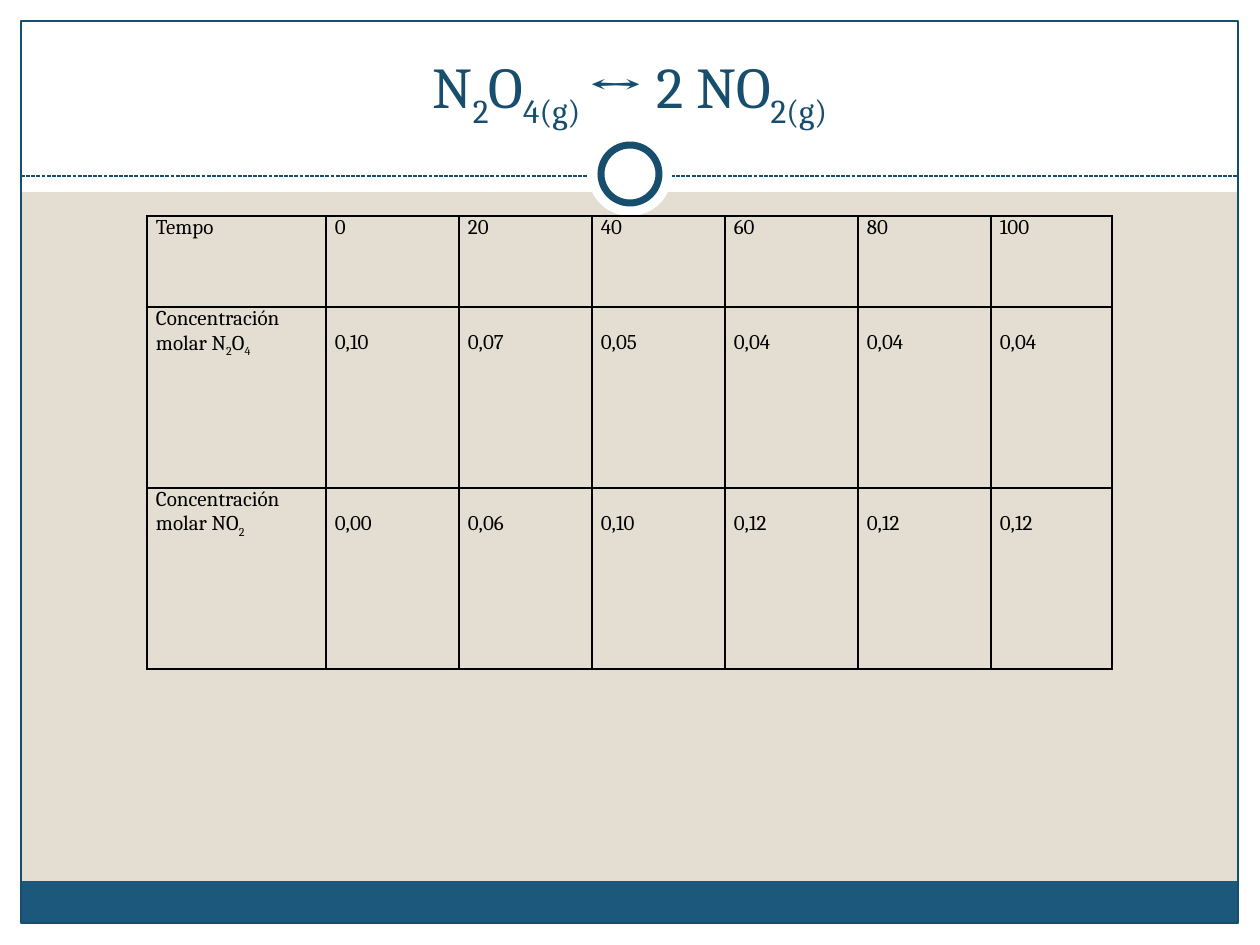
from dataclasses import dataclass

from lxml.etree import SubElement
from pptx import Presentation
from pptx.dml.color import RGBColor
from pptx.enum.dml import MSO_LINE
from pptx.enum.shapes import MSO_CONNECTOR, MSO_SHAPE
from pptx.enum.text import MSO_ANCHOR, PP_ALIGN
from pptx.oxml.ns import qn
from pptx.util import Emu, Pt


@dataclass(frozen=True)
class Theme:
    """Colours, font and type sizes of the deck."""
    sand: str = "E3DED1"
    white: str = "FFFFFF"
    blue: str = "1B587C"
    navy: str = "184E6D"
    black: str = "000000"
    font: str = "Cambria"
    title_size: int = 33
    arrow_size: int = 36
    cell_size: int = 12


def px(length):
    """Turn whole pixels into EMU at 126 pixels to the inch."""
    return Emu(round(length * 914400 / 126))


def apply(target, values):
    """Set each named attribute of the target."""
    for name, value in values.items():
        setattr(target, name, value)


class SlideBuilder:
    """Draws styled elements on the current slide."""

    def __init__(self, slide, theme):
        self.slide = slide
        self.theme = theme

    def background(self, color):
        """Fill the slide background."""
        fill = self.slide.background.fill
        fill.solid()
        fill.fore_color.rgb = RGBColor.from_string(color)

    def shape(self, kind, bounds, fill=None, line=None, width=0.75):
        """Add a preset shape with an optional fill and outline."""
        box = self.slide.shapes.add_shape(kind, *map(px, bounds))
        box.shadow.inherit = False
        for paint, color in ((box.fill, fill), (box.line.fill, line)):
            if color:
                paint.solid()
                paint.fore_color.rgb = RGBColor.from_string(color)
            else:
                paint.background()
        if line:
            box.line.width = Pt(width)

    def dashed_line(self, start, end, color):
        """Add a thin dashed connector without a shadow."""
        rule = self.slide.shapes.add_connector(
            MSO_CONNECTOR.STRAIGHT, *map(px, start + end))
        rule.line.color.rgb = RGBColor.from_string(color)
        apply(rule.line, {"width": Pt(0.75), "dash_style": MSO_LINE.SQUARE_DOT})
        SubElement(rule._element.spPr, qn("a:effectLst"))

    def spans(self, para, parts, size, color):
        """Add runs, each a text with its own format values."""
        for text, values in parts:
            span = para.add_run()
            span.text = text
            style = {"name": self.theme.font, "size": Pt(size), "bold": False}
            style.update(values)
            baseline = style.pop("baseline", None)
            apply(span.font, style)
            span.font.color.rgb = RGBColor.from_string(color)
            if baseline:
                span._r.get_or_add_rPr().set("baseline", baseline)

    def title(self, bounds, parts):
        """Add the centred title, anchored to the bottom of its box."""
        frame = self.slide.shapes.add_textbox(*map(px, bounds)).text_frame
        apply(frame, {"word_wrap": True, "vertical_anchor": MSO_ANCHOR.BOTTOM})
        para = frame.paragraphs[0]
        para.alignment = PP_ALIGN.CENTER
        self.spans(para, parts, self.theme.title_size, self.theme.navy)

    def cell(self, cell, parts, top):
        """Write one bordered, unfilled table cell."""
        apply(cell, {"margin_left": px(9), "margin_right": px(9),
                     "margin_top": px(top), "margin_bottom": 0})
        properties = cell._tc.get_or_add_tcPr()
        for side in ("lnL", "lnR", "lnT", "lnB"):
            border = SubElement(properties, qn(f"a:{side}"), w=str(Pt(1)))
            paint = SubElement(border, qn("a:solidFill"))
            SubElement(paint, qn("a:srgbClr"), val=self.theme.black)
        cell.fill.background()
        self.spans(cell.text_frame.paragraphs[0], parts,
                   self.theme.cell_size, self.theme.black)

    def table(self, origin, widths, heights, rows):
        """Add a table whose values sit one line lower below the header."""
        bounds = (*origin, sum(widths), sum(heights))
        table = self.slide.shapes.add_table(
            len(rows), len(widths), *map(px, bounds)).table
        apply(table, {"first_row": False, "horz_banding": False})
        for column, width in zip(table.columns, widths):
            column.width = px(width)
        for row, height in zip(table.rows, heights):
            row.height = px(height)
        for row_index, (label, values) in enumerate(rows):
            contents = [label] + [[(value, {})] for value in values.split()]
            for column_index, parts in enumerate(contents):
                top = 24 if row_index and column_index else 0
                self.cell(table.cell(row_index, column_index), parts, top)


def main():
    """Build and save the equilibrium slide."""
    theme = Theme()
    deck = Presentation()
    apply(deck, {"slide_width": px(1260), "slide_height": px(945)})
    page = SlideBuilder(deck.slides.add_slide(deck.slide_layouts[6]), theme)
    page.background(theme.sand)

    rectangle, ellipse = MSO_SHAPE.RECTANGLE, MSO_SHAPE.OVAL
    margins = [(0, 924, 1260, 21), (0, 0, 1260, 192),
               (0, 0, 21, 945), (1239, 0, 21, 945)]
    for bounds in margins:
        page.shape(rectangle, bounds, theme.white)
    page.shape(rectangle, (21, 881, 1217, 43), theme.blue)
    page.shape(rectangle, (21, 21, 1217, 902), line=theme.navy)
    page.dashed_line((21, 176), (1239, 176), theme.navy)
    page.shape(ellipse, (588, 132, 84, 84), theme.white)
    page.shape(ellipse, (601, 145, 58, 58), theme.white, theme.navy, 4)

    subscript = {"baseline": "-25000"}
    page.table((147, 216), [179] + [133] * 5 + [121], [91, 181, 181], [
        ([("Tempo", {})], "0 20 40 60 80 100"),
        ([("Concentración molar N", {}), ("2", subscript),
          ("O", {}), ("4", subscript)], "0,10 0,07 0,05 0,04 0,04 0,04"),
        ([("Concentración molar NO", {}), ("2", subscript)],
         "0,00 0,06 0,10 0,12 0,12 0,12"),
    ])
    page.title((42, 31, 1176, 105), [
        ("N", {}), ("2", subscript), ("O", {}), ("4(g) ", subscript),
        ("↔", {"size": Pt(theme.arrow_size), "bold": True}),
        (" 2 NO", {}), ("2(g)", subscript),
    ])
    deck.save("out.pptx")


if __name__ == "__main__":
    main()
